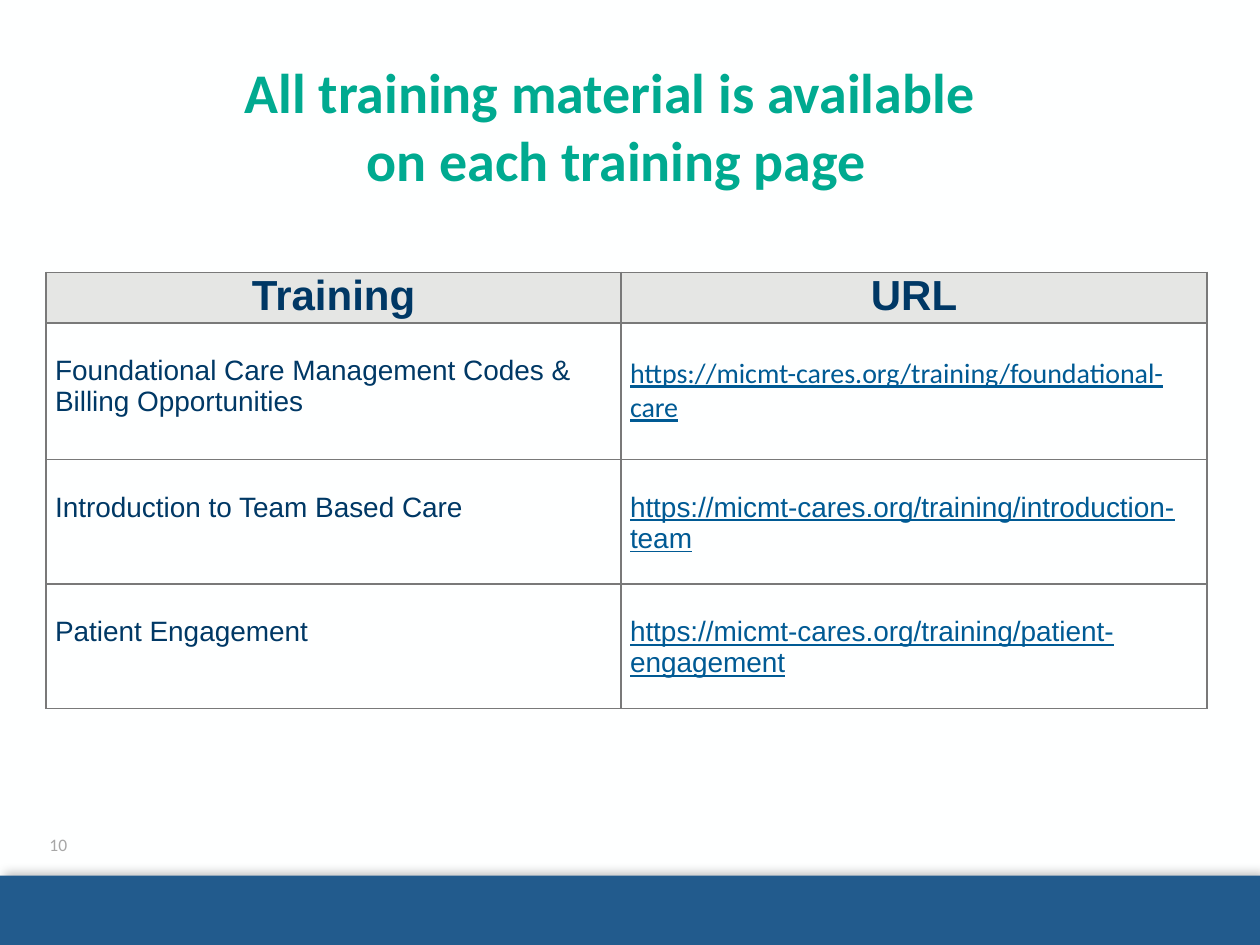
from dataclasses import dataclass

from lxml.etree import SubElement
from pptx import Presentation
from pptx.dml.color import RGBColor
from pptx.enum.shapes import MSO_SHAPE
from pptx.enum.text import MSO_ANCHOR, MSO_AUTO_SIZE, PP_ALIGN
from pptx.oxml import parse_xml
from pptx.oxml.ns import nsdecls, qn
from pptx.util import Cm, Pt

TITLE = ["All training material is available ", "on each training page"]
HEADS = ["Training", "URL"]
SITE = "https://micmt-cares.org/training/"
# training, page, font of the link, row height in cm
ROWS = [
    ("Foundational Care Management Codes & Billing Opportunities",
     "foundational-care", "Calibri", 2.76),
    ("Introduction to Team Based Care", "introduction-team", "Arial", 2.51),
    ("Patient Engagement", "patient-engagement", "Arial", 2.51),
]
PAGE = "10"
WIDTHS = [11.59, 11.81]
HEAD_H = 0.95
LEAD = {"Arial": 0.65, "Calibri": 0.69}  # one line of air above body text


@dataclass(frozen=True)
class Theme:
    back: str = "FEFFFF"
    band: str = "225B8D"
    title: str = "00AA90"
    ink: str = "003865"
    link: str = "005A94"
    head: str = "E5E6E4"
    rule: str = "797979"
    muted: str = "A7A7A7"
    title_size: int = 32
    head_size: int = 24
    body_size: int = 16
    page_size: int = 10


THEME = Theme()


def paint(fill, color):
    fill.solid()
    fill.fore_color.rgb = RGBColor.from_string(color)


def style(para, face, size, color, bold=False, line=False, align=None):
    font = para.font
    font.name, font.size = face, Pt(size)
    font.bold, font.underline = bold, line
    font.color.rgb = RGBColor.from_string(color)
    para.alignment = align


def edge(cell):
    """Draw a thin rule on all four sides of a cell."""
    props = cell._tc.get_or_add_tcPr()
    for side in ("lnL", "lnR", "lnT", "lnB"):
        line = SubElement(props, qn(f"a:{side}"), w=str(Pt(1)))
        fill = SubElement(line, qn("a:solidFill"))
        SubElement(fill, qn("a:srgbClr"), val=THEME.rule)


def put(cell, text, fill, top=0, **look):
    edge(cell)
    paint(cell.fill, fill)
    cell.margin_left = cell.margin_right = Cm(0.18)
    cell.margin_top, cell.margin_bottom = Cm(top), 0
    cell.text = text
    style(cell.text_frame.paragraphs[0], **look)


def add_band(slide):
    band = slide.shapes.add_shape(
        MSO_SHAPE.RECTANGLE, 0, Cm(17.65), Cm(25.4), Cm(1.4))
    paint(band.fill, THEME.band)
    band.line.fill.background()
    band.shadow.inherit = False
    band._element.spPr.find(qn("a:effectLst")).append(parse_xml(
        f'<a:outerShdw {nsdecls("a")} blurRad="{Pt(6)}" dist="{Pt(3)}" '
        'dir="18900000" rotWithShape="0"><a:srgbClr val="000000">'
        '<a:alpha val="24000"/></a:srgbClr></a:outerShdw>'))


def add_page(slide):
    box = slide.shapes.add_textbox(Cm(0.64), Cm(16.51), Cm(1.07), Cm(1.02))
    frame = box.text_frame
    frame.word_wrap = True
    frame.vertical_anchor = MSO_ANCHOR.MIDDLE
    frame.margin_left = frame.margin_right = 0
    frame.text = PAGE
    style(frame.paragraphs[0], "Calibri", THEME.page_size, THEME.muted,
          align=PP_ALIGN.CENTER)


def add_title(slide):
    title = slide.shapes.title
    title.left, title.top = Cm(0.53), Cm(1.02)
    title.width, title.height = Cm(23.8), Cm(3)
    frame = title.text_frame
    frame.auto_size = MSO_AUTO_SIZE.NONE
    frame.vertical_anchor = MSO_ANCHOR.MIDDLE
    frame.text = "\n".join(TITLE)
    for para in frame.paragraphs:
        style(para, "Calibri", THEME.title_size, THEME.title, bold=True,
              align=PP_ALIGN.CENTER)


def add_grid(slide):
    highs = [HEAD_H] + [row[-1] for row in ROWS]
    grid = slide.shapes.add_table(
        len(highs), len(WIDTHS), Cm(0.93), Cm(5.49),
        Cm(sum(WIDTHS)), Cm(sum(highs))).table
    for col, wide in zip(grid.columns, WIDTHS):
        col.width = Cm(wide)
    for row, high in zip(grid.rows, highs):
        row.height = Cm(high)
    for col, text in enumerate(HEADS):
        put(grid.cell(0, col), text, THEME.head, face="Arial",
            size=THEME.head_size, color=THEME.ink, bold=True,
            align=PP_ALIGN.CENTER)
    for num, (name, page, face, _) in enumerate(ROWS, 1):
        put(grid.cell(num, 0), name, THEME.back, LEAD["Arial"],
            face="Arial", size=THEME.body_size, color=THEME.ink)
        put(grid.cell(num, 1), SITE + page, THEME.back, LEAD[face],
            face=face, size=THEME.body_size, color=THEME.link, line=True)


def main():
    deck = Presentation()
    deck.slide_width, deck.slide_height = Cm(25.4), Cm(19.05)
    slide = deck.slides.add_slide(deck.slide_layouts.get_by_name("Title Only"))
    paint(slide.background.fill, THEME.back)
    add_band(slide)
    add_page(slide)
    add_grid(slide)
    add_title(slide)
    deck.save("out.pptx")


if __name__ == "__main__":
    main()
